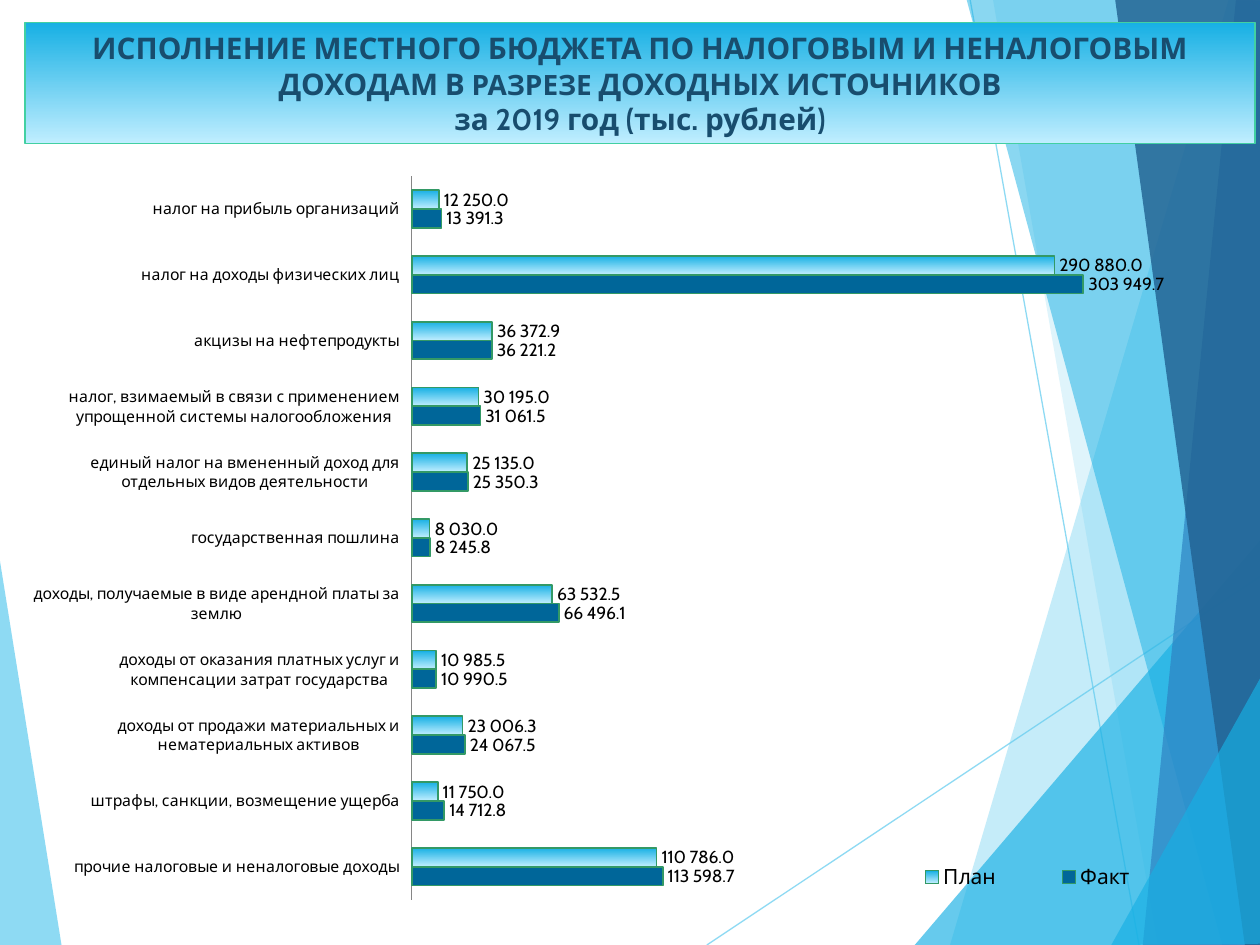
from typing import NamedTuple

from lxml.etree import SubElement
from pptx import Presentation
from pptx.chart.data import CategoryChartData
from pptx.dml.color import RGBColor
from pptx.enum.chart import (XL_CHART_TYPE, XL_LABEL_POSITION, XL_LEGEND_POSITION,
                             XL_TICK_LABEL_POSITION, XL_TICK_MARK)
from pptx.enum.shapes import MSO_CONNECTOR
from pptx.enum.text import MSO_ANCHOR, MSO_AUTO_SIZE, PP_ALIGN
from pptx.oxml import parse_xml
from pptx.oxml.ns import nsdecls, qn
from pptx.util import Inches, Pt

FONT = "Cabin"
SKY = RGBColor(0x5F, 0xCB, 0xEF)
AZURE = RGBColor(0x17, 0xB0, 0xE4)
PALE = RGBColor(0xC0, 0xEE, 0xFF)
BLUE = RGBColor(0x2E, 0x83, 0xC3)
NAVY = RGBColor(0x22, 0x62, 0x92)
MINT = RGBColor(0x42, 0xD0, 0xA2)
TITLE_COLOR = RGBColor(0x18, 0x4D, 0x6E)
FACT_COLOR = RGBColor(0x00, 0x66, 0x99)
BAR_OUTLINE = RGBColor(0x33, 0x99, 0x66)
AXIS_GRAY = RGBColor(0x86, 0x86, 0x86)
BLACK = RGBColor(0, 0, 0)
NUMBER_FORMAT = r"#\ ##0.0"


class Facet(NamedTuple):
    points: list[tuple[float, float]]
    color: RGBColor
    opacity: int


class Ray(NamedTuple):
    start: tuple[float, float]
    end: tuple[float, float]


class Income(NamedTuple):
    source: str
    plan: float
    fact: float


LEFT_FACET = Facet([(-0.01, 4.39), (0.49, 7.51), (-0.01, 7.5)], SKY, 70)
RAYS = [Ray((5.61, 7.5), (10.01, 4.57)), Ray((7.7, 0), (9.04, 7.5))]
RIGHT_FACETS = [
    Facet([(9.75, 0), (7.54, 7.5), (10.02, 7.51), (10.01, 0.01)], SKY, 36),
    Facet([(7.88, -0.01), (9.19, 7.5), (10.01, 7.5), (10.01, -0.01)], SKY, 20),
    Facet([(7.26, 7.5), (10, 4.29), (10.01, 7.5)], AZURE, 66),
    Facet([(7.67, -0.01), (9.7, 7.5), (10.01, 7.49), (10.01, -0.01)], AZURE, 50),
    Facet([(9.81, -0.01), (9.07, 7.5), (10.01, 7.5), (10, -0.01)], BLUE, 70),
    Facet([(8.85, -0.01), (9.88, 7.5), (10.02, 7.5), (10, -0.01)], NAVY, 82),
    Facet([(8.82, 7.5), (10.02, 5.35), (10.02, 7.49)], AZURE, 66),
]
INCOMES = [
    Income("прочие налоговые и неналоговые доходы", 110786, 113598.7),
    Income("штрафы, санкции, возмещение ущерба", 11750, 14712.8),
    Income("доходы от продажи материальных и нематериальных активов", 23006.3, 24067.5),
    Income("доходы от оказания платных услуг и компенсации затрат государства",
           10985.5, 10990.5),
    Income("доходы, получаемые в виде арендной платы за землю", 63532.5, 66496.1),
    Income("государственная пошлина", 8030, 8245.8),
    Income("единый налог на вмененный доход для отдельных видов деятельности",
           25135, 25350.3),
    Income("налог, взимаемый в связи с применением упрощенной системы налогообложения",
           30195, 31061.5),
    Income("акцизы на нефтепродукты", 36372.9, 36221.2),
    Income("налог на доходы физических лиц", 290880, 303949.7),
    Income("налог на прибыль организаций", 12250, 13391.3),
]
TITLE_LINES = [
    [("ИСПОЛНЕНИЕ МЕСТНОГО БЮДЖЕТА ПО НАЛОГОВЫМ И НЕНАЛОГОВЫМ ДОХОДАМ В ", 17),
     ("РАЗРЕЗЕ", 16), (" ДОХОДНЫХ ИСТОЧНИКОВ", 17)],
    [("за 2019 год (тыс. рублей)", 17)],
]


def set_opacity(color_format_owner, percent: int) -> None:
    color = next(color_format_owner.iter(qn("a:srgbClr")))
    SubElement(color, qn("a:alpha")).set("val", str(percent * 1000))


def fill_gradient(fill) -> None:
    """Fade from pale at the bottom to azure at the top."""
    fill.gradient()
    fill.gradient_angle = 90
    for stop, color in zip(fill.gradient_stops, (PALE, AZURE)):
        stop.color.rgb = color


def format_font(font, size: float, color: RGBColor = BLACK, bold: bool = False) -> None:
    font.name = FONT
    font.size = Pt(size)
    font.color.rgb = color
    font.bold = bold


def draw_facet(slide, facet: Facet) -> None:
    points = [(round(x * 100), round(y * 100)) for x, y in facet.points]
    builder = slide.shapes.build_freeform(*points[0], scale=Inches(0.01))
    builder.add_line_segments(points[1:], close=True)
    shape = builder.convert_to_shape()
    shape.shadow.inherit = False
    shape.fill.solid()
    shape.fill.fore_color.rgb = facet.color
    set_opacity(shape._element.spPr, facet.opacity)
    shape.line.fill.background()


def draw_ray(slide, ray: Ray) -> None:
    connector = slide.shapes.add_connector(
        MSO_CONNECTOR.STRAIGHT, *map(Inches, ray.start + ray.end))
    connector.line.color.rgb = SKY
    connector.line.width = Pt(0.75)
    properties = connector._element.spPr
    set_opacity(properties, 70)
    SubElement(properties, qn("a:effectLst"))


def format_title(slide) -> None:
    title = slide.shapes.title
    slide.shapes._spTree.append(title._element)  # bring in front of the facets
    title.left, title.top = Inches(0.2), Inches(0.18)
    title.width, title.height = Inches(9.76), Inches(0.96)
    fill_gradient(title.fill)
    title.line.color.rgb = MINT
    title.line.width = Pt(1)
    frame = title.text_frame
    frame.word_wrap = True
    frame.auto_size = MSO_AUTO_SIZE.SHAPE_TO_FIT_TEXT
    frame.vertical_anchor = MSO_ANCHOR.MIDDLE
    for index, line in enumerate(TITLE_LINES):
        paragraph = frame.add_paragraph() if index else frame.paragraphs[0]
        paragraph.alignment = PP_ALIGN.CENTER
        for text, size in line:
            run = paragraph.add_run()
            run.text = text
            format_font(run.font, size, TITLE_COLOR, bold=True)


def make_layout(x: float, y: float, width: float, height: float, inner: bool = False):
    """Manual chart layout, in fractions of the chart area."""
    target = '<c:layoutTarget val="inner"/>' if inner else ""
    return parse_xml(
        f'<c:layout {nsdecls("c")}><c:manualLayout>{target}'
        '<c:xMode val="edge"/><c:yMode val="edge"/>'
        f'<c:x val="{x}"/><c:y val="{y}"/><c:w val="{width}"/><c:h val="{height}"/>'
        '</c:manualLayout></c:layout>')


def add_income_chart(slide) -> None:
    data = CategoryChartData(number_format=NUMBER_FORMAT)
    data.categories = [income.source for income in INCOMES]
    data.add_series("Факт", [income.fact for income in INCOMES])
    data.add_series("План", [income.plan for income in INCOMES])
    chart = slide.shapes.add_chart(
        XL_CHART_TYPE.BAR_CLUSTERED, Inches(0.2), Inches(1.32),
        Inches(9.53), Inches(5.97), data).chart
    format_font(chart.font, 18)
    chart.has_title = False

    plot = chart.plots[0]
    plot.gap_width = 150
    plot.overlap = 0
    plot.vary_by_categories = False
    for series in plot.series:
        if series.name == "План":
            fill_gradient(series.format.fill)
        else:
            series.format.fill.solid()
            series.format.fill.fore_color.rgb = FACT_COLOR
        series.format.line.color.rgb = BAR_OUTLINE
        series.format.line.width = Pt(1)
        labels = series.data_labels
        labels.show_value = True
        labels.number_format = NUMBER_FORMAT
        labels.number_format_is_linked = False
        labels.position = XL_LABEL_POSITION.OUTSIDE_END
        format_font(labels.font, 10)

    category_axis = chart.category_axis
    category_axis.major_tick_mark = XL_TICK_MARK.NONE
    category_axis.tick_label_position = XL_TICK_LABEL_POSITION.LOW
    category_axis.format.line.color.rgb = AXIS_GRAY
    format_font(category_axis.tick_labels.font, 9)
    value_axis = chart.value_axis
    value_axis.minimum_scale, value_axis.maximum_scale = 0, 350000
    value_axis.has_major_gridlines = False
    value_axis.visible = False

    chart.has_legend = True
    legend = chart.legend
    legend.position = XL_LEGEND_POSITION.BOTTOM
    legend.include_in_layout = False
    format_font(legend.font, 12)
    plot_area = chart._chartSpace.chart.plotArea
    for old_layout in plot_area.findall(qn("c:layout")):
        plot_area.remove(old_layout)
    plot_area.insert(0, make_layout(0.322, 0.013, 0.644, 0.962, inner=True))
    legend_element = legend._element
    for old_layout in legend_element.findall(qn("c:layout")):
        legend_element.remove(old_layout)
    legend_element.find(qn("c:legendPos")).addnext(make_layout(0.7, 0.92, 0.27, 0.05))


def main() -> None:
    presentation = Presentation()
    presentation.slide_width, presentation.slide_height = Inches(10), Inches(7.5)
    slide = presentation.slides.add_slide(presentation.slide_layouts[5])
    draw_facet(slide, LEFT_FACET)
    for ray in RAYS:
        draw_ray(slide, ray)
    for facet in RIGHT_FACETS:
        draw_facet(slide, facet)
    format_title(slide)
    add_income_chart(slide)
    presentation.save("out.pptx")


if __name__ == "__main__":
    main()
